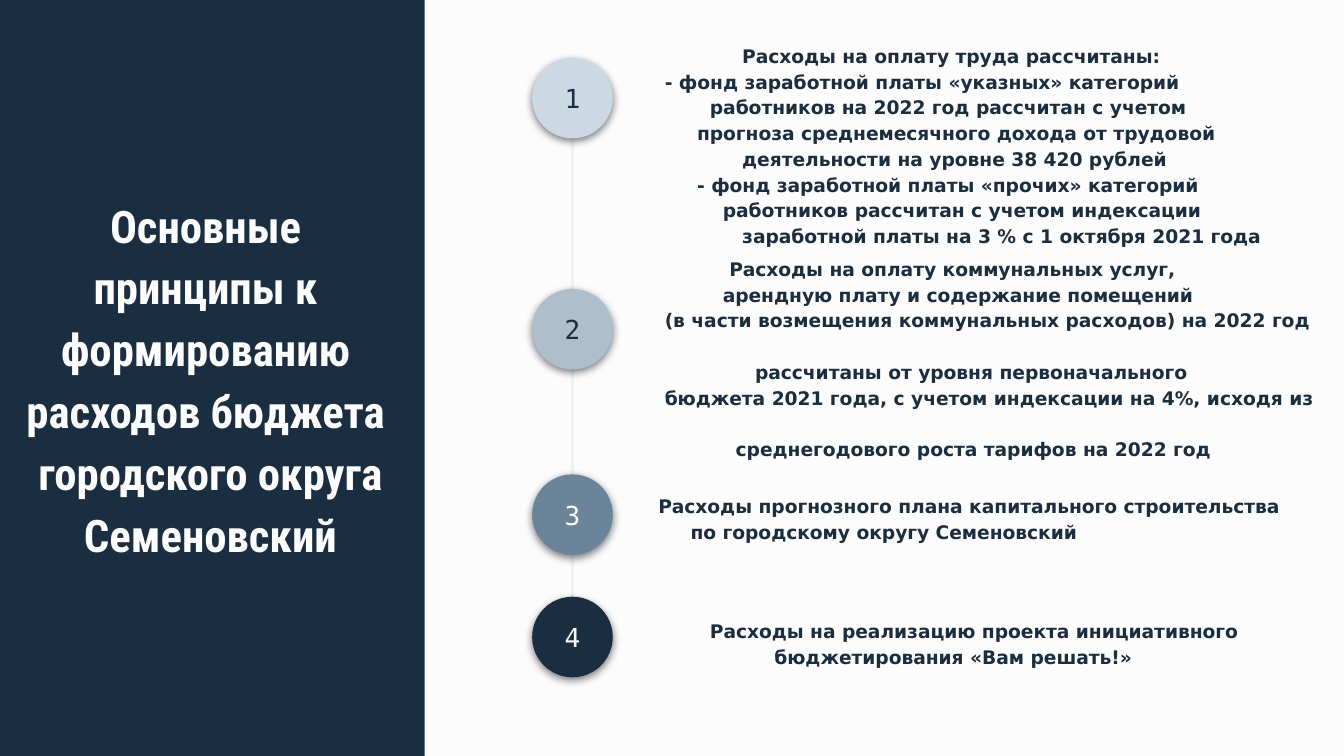
from lxml import etree
from pptx import Presentation
from pptx.dml.color import RGBColor
from pptx.enum.shapes import MSO_CONNECTOR, MSO_SHAPE
from pptx.enum.text import MSO_ANCHOR, PP_ALIGN
from pptx.oxml.ns import qn
from pptx.util import Inches, Pt

OVAL, RECTANGLE = MSO_SHAPE.OVAL, MSO_SHAPE.RECTANGLE
STRAIGHT = MSO_CONNECTOR.STRAIGHT
MIDDLE = MSO_ANCHOR.MIDDLE
LEFT, CENTER = PP_ALIGN.LEFT, PP_ALIGN.CENTER

COLORS = {
    "paper": "FCFCFC", "navy": "192E40", "rail": "EBF3F8",
    "mist": "CBD9E2", "haze": "ACBFCB", "steel": "6A849A", "shadow": "000000",
}
TITLE_FONT, BODY_FONT, NUMBER_FONT = "Roboto Condensed", "DejaVu Sans", "DejaVu Sans Mono"

COLUMNS, ROWS = 100, 56.25
CELL = Inches(0.1)
INDENT = 0.48
LINE_GAP = 13.8
RAIL_COLUMN, MARKER_SIZE = 42.6, 6
TEXT_COLUMN = 48

TITLE = [
    (0, "Основные принципы к формированию расходов бюджета"),
    (1.5, "городского округа Семеновский"),
]

STEPS = [
    {"marker_row": 4.3, "fill": "mist", "number": "navy", "box": (5.9, 48.9, 12.3), "foot": 2.6, "lines": [
        (13, "Расходы на оплату труда рассчитаны:", 0),
        (1, "- фонд заработной платы «указных» категорий", 0),
        (8, "работников на 2022 год рассчитан с учетом", 0),
        (6, "прогноза среднемесячного дохода от трудовой", 0),
        (13, "деятельности на уровне 38 420 рублей", 0),
        (6, "- фонд заработной платы «прочих» категорий", 0),
        (10, "работников рассчитан с учетом индексации", 0),
        (13, "заработной платы на 3 % с 1 октября 2021 года", 0)]},
    {"marker_row": 21.5, "fill": "haze", "number": "navy", "box": (15.3, 52.7, 22.6), "foot": 0, "lines": [
        (11, "Расходы на оплату коммунальных услуг,", 0),
        (10, "арендную плату и содержание помещений", 0),
        (1, "(в части возмещения коммунальных расходов) на 2022 год", 0),
        (15, "рассчитаны от уровня первоначального", LINE_GAP),
        (1, "бюджета 2021 года, с учетом индексации на 4%, исходя из", 0),
        (12, "среднегодового роста тарифов на 2022 год", LINE_GAP)]},
    {"marker_row": 35.3, "fill": "steel", "number": "paper", "box": (35.8, 50.6, 8.1), "foot": 2.7, "lines": [
        (0, "Расходы прогнозного плана капитального строительства", 0),
        (5, "по городскому округу Семеновский", 0)]},
    {"marker_row": 44.4, "fill": "navy", "number": "paper", "box": (44.4, 50.6, 9), "foot": 2.2, "lines": [
        (8, "Расходы на реализацию проекта инициативного", 0),
        (18, "бюджетирования «Вам решать!»", 0)]},
]


def cells(count):
    return round(count * CELL)


def rgb(name):
    return RGBColor.from_string(COLORS[name])


def set_frame(frame, inset, foot=0):
    frame.word_wrap = True
    frame.vertical_anchor = MIDDLE
    frame.margin_left = frame.margin_right = frame.margin_top = cells(inset)
    frame.margin_bottom = cells(inset + foot)


def add_run(paragraph, text, font, size, color, bold=False):
    run = paragraph.add_run()
    run.text = text
    run.font.name, run.font.size, run.font.bold = font, Pt(size), bold
    run.font.color.rgb = rgb(color)


def add_line(frame, index, alignment, indent, gap=0):
    paragraph = frame.add_paragraph() if index else frame.paragraphs[0]
    properties = paragraph._p.get_or_add_pPr()
    properties.set("marL", str(cells(indent * INDENT)))
    properties.set("indent", "0")
    paragraph.alignment, paragraph.line_spacing = alignment, 1.15
    paragraph.space_before = Pt(gap)
    return paragraph


def add_filled(slide, preset, left, top, width, height, color):
    filled = slide.shapes.add_shape(preset, cells(left), cells(top), cells(width), cells(height))
    filled.shadow.inherit = False
    filled.fill.solid()
    filled.fill.fore_color.rgb = rgb(color)
    filled.line.fill.background()
    return filled


def add_title(slide):
    title = slide.shapes.title
    title.left, title.top, title.width, title.height = 0, cells(10.3), cells(30.6), cells(41)
    set_frame(title.text_frame, 1, 5.7)
    for index, (indent, text) in enumerate(TITLE):
        paragraph = add_line(title.text_frame, index, CENTER, indent)
        add_run(paragraph, text, TITLE_FONT, 24, "paper", True)
    panel = add_filled(slide, RECTANGLE, -1.3, -0.9, 32.9, 58, "navy")
    title.element.addprevious(panel.element)


def add_rail(slide):
    top = STEPS[0]["marker_row"] + MARKER_SIZE
    bottom = STEPS[-1]["marker_row"]
    rail = slide.shapes.add_connector(
        STRAIGHT, cells(RAIL_COLUMN), cells(top), cells(RAIL_COLUMN), cells(bottom))
    rail.line.color.rgb, rail.line.width = rgb("rail"), Pt(1.5)
    etree.SubElement(rail.element.spPr, qn("a:effectLst"))


def add_marker(slide, number, step):
    marker = add_filled(slide, OVAL, RAIL_COLUMN - MARKER_SIZE / 2, step["marker_row"],
                        MARKER_SIZE, MARKER_SIZE, step["fill"])
    effects = marker.element.spPr.find(qn("a:effectLst"))
    shadow = etree.SubElement(effects, qn("a:outerShdw"), blurRad=str(Pt(4.5)), dist=str(Pt(1.5)),
                              dir="5400000", algn="bl", rotWithShape="0")
    tint = etree.SubElement(shadow, qn("a:srgbClr"), val=COLORS["shadow"])
    etree.SubElement(tint, qn("a:alpha"), val="50000")
    set_frame(marker.text_frame, 0)
    paragraph = marker.text_frame.paragraphs[0]
    paragraph.alignment = CENTER
    add_run(paragraph, str(number), NUMBER_FONT, 14, step["number"])


def add_principle(slide, step):
    top, width, height = step["box"]
    principle = slide.shapes.add_textbox(cells(TEXT_COLUMN), cells(top), cells(width), cells(height))
    set_frame(principle.text_frame, 1, step["foot"])
    for index, (indent, text, gap) in enumerate(step["lines"]):
        paragraph = add_line(principle.text_frame, index, LEFT, indent, gap)
        add_run(paragraph, text, BODY_FONT, 10, "navy", True)


def main():
    deck = Presentation()
    deck.slide_width, deck.slide_height = cells(COLUMNS), cells(ROWS)
    slide = deck.slides.add_slide(deck.slide_layouts[5])
    slide.background.fill.solid()
    slide.background.fill.fore_color.rgb = rgb("paper")
    add_title(slide)
    add_rail(slide)
    for number, step in enumerate(STEPS, 1):
        add_principle(slide, step)
        add_marker(slide, number, step)
    deck.save("out.pptx")


if __name__ == "__main__":
    main()
